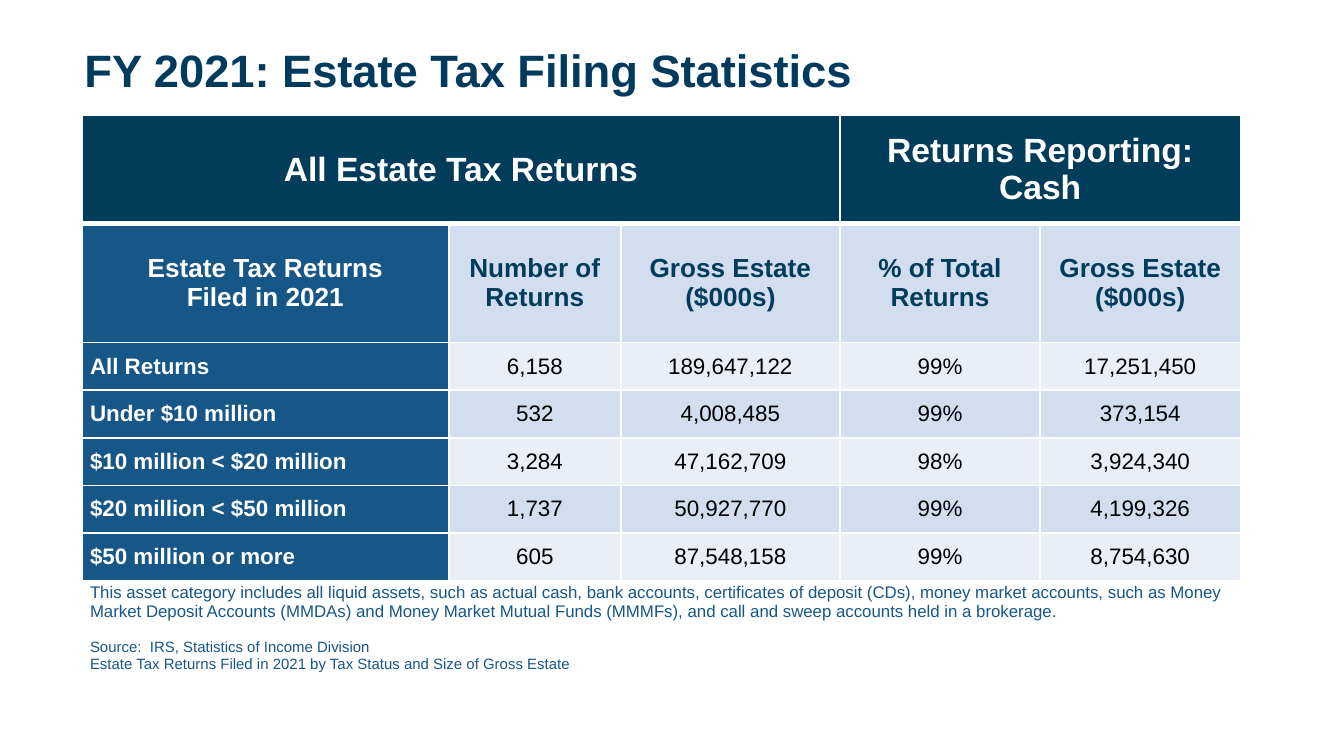
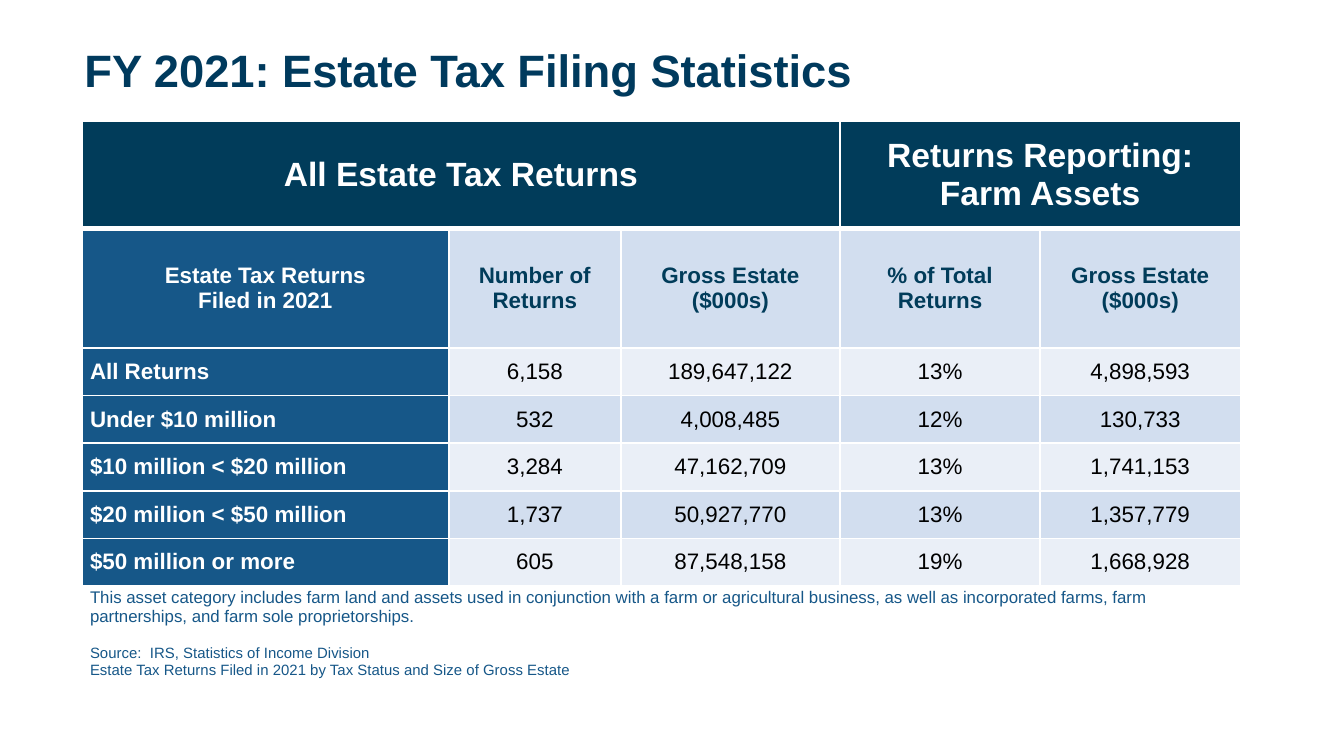
from dataclasses import dataclass

from lxml.etree import SubElement
from pptx import Presentation
from pptx.dml.color import RGBColor
from pptx.enum.text import MSO_ANCHOR, PP_ALIGN
from pptx.oxml.ns import qn
from pptx.slide import Slide
from pptx.table import Table, _Cell
from pptx.text.text import _Paragraph
from pptx.util import Inches, Pt

FONT = "Arial"
COLORS = {
    "title": "003A5D",
    "navy": "013C5A",
    "blue": "165788",
    "band": "D2DEEF",
    "light": "EAEFF7",
    "white": "FFFFFF",
    "black": "000000",
}

TITLE = "FY 2021: Estate Tax Filing Statistics"
SOURCE = ("Source:  IRS, Statistics of Income Division\n"
          "Estate Tax Returns Filed in 2021 by Tax Status and Size of Gross Estate")
COLUMN_WIDTHS = [2.73, 1.28, 1.63, 1.49, 1.49]
COLUMN_HEADS = ["Estate Tax Returns\nFiled in 2021", "Number of\nReturns",
                "Gross Estate\n($000s)", "% of Total Returns", "Gross Estate ($000s)"]
ALL_RETURNS = [
    ("All Returns", "6,158", "189,647,122"),
    ("Under $10 million", "532", "4,008,485"),
    ("$10 million < $20 million", "3,284", "47,162,709"),
    ("$20 million < $50 million", "1,737", "50,927,770"),
    ("$50 million or more", "605", "87,548,158"),
]
BODY_HEIGHT = 1.77
BODY_ROWS = len(ALL_RETURNS)
ROW_HEIGHTS = [0.8, 0.89] + [BODY_HEIGHT / BODY_ROWS] * BODY_ROWS + [0.69]


@dataclass
class CellStyle:
    fill: str
    color: str
    size: float
    bold: bool = True
    align: PP_ALIGN = PP_ALIGN.CENTER
    inset: float = 0.06


@dataclass
class AssetSlide:
    asset: str
    top: float
    head_size: float
    reporting: list[tuple[str, str]]
    note: str


ASSET_SLIDES = [
    AssetSlide(
        "Cash", 0.86, 14,
        [("99%", "17,251,450"), ("99%", "373,154"), ("98%", "3,924,340"),
         ("99%", "4,199,326"), ("99%", "8,754,630")],
        "This asset category includes all liquid assets, such as actual cash, bank accounts, "
        "certificates of deposit (CDs), money market accounts, such as Money Market Deposit "
        "Accounts (MMDAs) and Money Market Mutual Funds (MMMFs), and call and sweep accounts "
        "held in a brokerage."),
    AssetSlide(
        "Farm Assets", 0.9, 12,
        [("13%", "4,898,593"), ("12%", "130,733"), ("13%", "1,741,153"),
         ("13%", "1,357,779"), ("19%", "1,668,928")],
        "This asset category includes farm land and assets used in conjunction with a farm or "
        "agricultural business, as well as incorporated farms, farm partnerships, and farm "
        "sole proprietorships."),
]


def rgb(name: str) -> RGBColor:
    return RGBColor.from_string(COLORS[name])


def write(p: _Paragraph, text: str, size: float, color: str, bold: bool = False) -> None:
    p.text = text
    for r in p.runs:
        r.font.name = FONT
        r.font.size = Pt(size)
        r.font.bold = bold
        r.font.color.rgb = rgb(color)


def set_borders(cell: _Cell, top: float = 1, bottom: float = 1) -> None:
    """Give the cell white borders; widths are in points."""
    tc_pr = cell._tc.get_or_add_tcPr()
    widths = {"a:lnL": 1, "a:lnR": 1, "a:lnT": top, "a:lnB": bottom}
    for i, (tag, width) in enumerate(widths.items()):
        ln = SubElement(tc_pr, qn(tag), w=str(Pt(width)))
        fill = SubElement(ln, qn("a:solidFill"))
        SubElement(fill, qn("a:srgbClr"), val=COLORS["white"])
        tc_pr.insert(i, ln)


def set_insets(cell: _Cell, inset: float) -> None:
    cell.vertical_anchor = MSO_ANCHOR.MIDDLE
    cell.margin_left = cell.margin_right = Inches(inset)
    cell.margin_top = cell.margin_bottom = 0


def fill_cell(cell: _Cell, text: str, style: CellStyle) -> None:
    set_insets(cell, style.inset)
    cell.fill.solid()
    cell.fill.fore_color.rgb = rgb(style.fill)
    p = cell.text_frame.paragraphs[0]
    p.alignment = style.align
    write(p, text, style.size, style.color, style.bold)


def add_title(s: Slide) -> None:
    tf = s.shapes.add_textbox(Inches(0.53), Inches(0.3), Inches(8.78), Inches(0.49)).text_frame
    tf.word_wrap = True
    tf.vertical_anchor = MSO_ANCHOR.MIDDLE
    p = tf.paragraphs[0]
    p.line_spacing = 0.9
    write(p, TITLE, 24.3, "title", True)


def fill_heads(table: Table, content: AssetSlide) -> None:
    group_style = CellStyle("navy", "white", 18)
    groups = [(0, 2, "All Estate Tax Returns"),
              (3, 4, f"Returns Reporting:\n{content.asset}")]
    for first, last, text in groups:
        table.cell(0, first).merge(table.cell(0, last))
        fill_cell(table.cell(0, first), text, group_style)
    for c, text in enumerate(COLUMN_HEADS):
        fill, color = ("band", "navy") if c else ("blue", "white")
        fill_cell(table.cell(1, c), text, CellStyle(fill, color, content.head_size))


def fill_body(table: Table, content: AssetSlide) -> None:
    label_style = CellStyle("blue", "white", 12, align=PP_ALIGN.LEFT)
    for i, (returns, reporting) in enumerate(zip(ALL_RETURNS, content.reporting)):
        band = "band" if i % 2 else "light"
        for c, text in enumerate(returns + reporting):
            inset = 0.1 if c < 3 else 0
            style = CellStyle(band, "black", 12, False, inset=inset) if c else label_style
            fill_cell(table.cell(i + 2, c), text, style)


def fill_note(table: Table, note: str) -> None:
    row = len(ROW_HEIGHTS) - 1
    cell = table.cell(row, 0)
    cell.merge(table.cell(row, len(COLUMN_WIDTHS) - 1))
    set_insets(cell, 0.06)
    cell.fill.background()
    tf = cell.text_frame
    write(tf.paragraphs[0], note, 9, "blue")
    p = tf.add_paragraph()
    p.space_before = Pt(10)
    write(p, SOURCE, 8, "blue")


def add_statistics_table(s: Slide, content: AssetSlide) -> None:
    frame = s.shapes.add_table(
        len(ROW_HEIGHTS), len(COLUMN_WIDTHS), Inches(0.61), Inches(content.top),
        Inches(sum(COLUMN_WIDTHS)), Inches(sum(ROW_HEIGHTS)))
    table = frame.table
    table.first_row = table.horz_banding = False
    for column, width in zip(table.columns, COLUMN_WIDTHS):
        column.width = Inches(width)
    fill_heads(table, content)
    fill_body(table, content)
    fill_note(table, content.note)
    for i, (row, height) in enumerate(zip(table.rows, ROW_HEIGHTS)):
        row.height = Inches(height)
        for cell in row.cells:
            if not cell.is_spanned:
                set_borders(cell, top=3 if i == 1 else 1, bottom=3 if i == 0 else 1)


def main() -> None:
    prs = Presentation()
    prs.slide_width, prs.slide_height = Inches(10), Inches(10 * 9 / 16)
    for content in ASSET_SLIDES:
        s = prs.slides.add_slide(prs.slide_layouts[6])
        add_title(s)
        add_statistics_table(s, content)
    prs.save("out.pptx")


if __name__ == "__main__":
    main()
